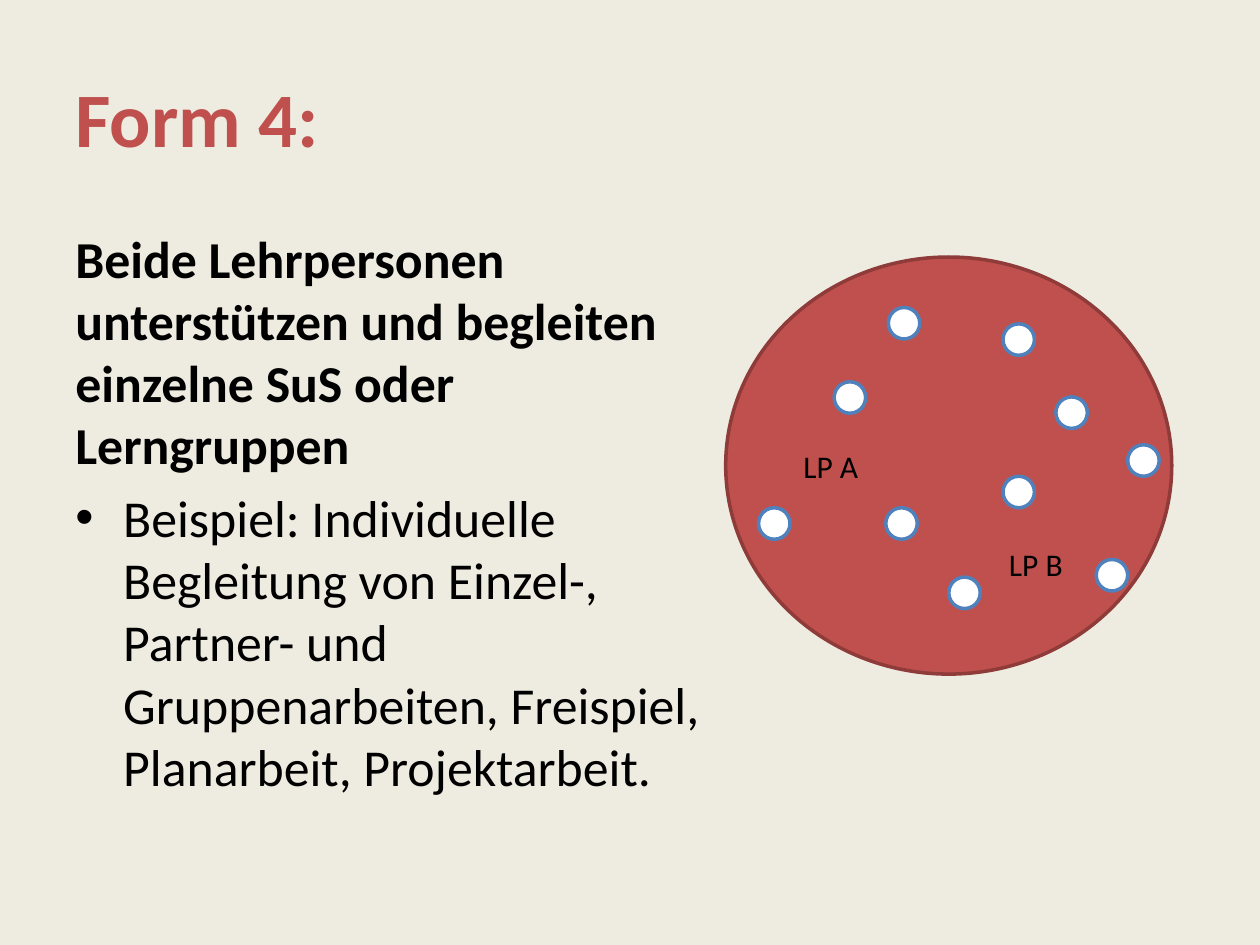
from lxml import etree
from pptx import Presentation
from pptx import util as u
from pptx.dml.color import RGBColor
from pptx.enum import shapes, text

COLS, ROWS = 40, 30  # square cells of a quarter inch
INK, RED, DARK_RED = "000000", "C0504D", "8E3B39"
WHITE, BLUE, CREAM = "FFFFFF", "4F81BD", "EEECE1"


def color(value):
    return RGBColor.from_string(value)


def write(tf, content, size=18, ink=INK, bold=False, before=0, bullet=None, first=True):
    """Add one formatted paragraph to a text frame."""
    p = tf.paragraphs[0] if first else tf.add_paragraph()
    p.alignment = text.PP_ALIGN.LEFT
    p.space_before = u.Pt(before)
    r = p.add_run()
    r.text = content
    r.font.name, r.font.size, r.font.bold = "Calibri", u.Pt(size), bold
    r.font.color.rgb = color(ink)
    if bullet:
        pPr = p._p.get_or_add_pPr()
        indent = u.Inches(0.38)
        pPr.set("marL", str(indent))
        pPr.set("indent", str(-indent))
        ns = pPr.nsmap["a"]
        etree.SubElement(pPr, f"{{{ns}}}buFont", typeface="Arial")
        etree.SubElement(pPr, f"{{{ns}}}buChar", char=bullet)


class Deck:
    """Holds the grid, the style and the current slide."""

    def __init__(self):
        self.prs = Presentation()
        self.prs.slide_width, self.prs.slide_height = u.Inches(10), u.Inches(7.5)
        self.s = self.prs.slides.add_slide(self.prs.slide_layouts[6])
        fill = self.s.background.fill
        fill.solid()
        fill.fore_color.rgb = color(CREAM)

    def box(self, col, row, width, height):
        cw, rh = self.prs.slide_width / COLS, self.prs.slide_height / ROWS
        return [round(v) for v in (col * cw, row * rh, width * cw, height * rh)]

    def text_box(self, *cells, anchor=text.MSO_ANCHOR.TOP, wrap=True):
        tf = self.s.shapes.add_textbox(*self.box(*cells)).text_frame
        tf.word_wrap, tf.vertical_anchor = wrap, anchor
        if not wrap:
            tf.auto_size = text.MSO_AUTO_SIZE.SHAPE_TO_FIT_TEXT
        return tf

    def circle(self, *cells, fill=WHITE, line=BLUE):
        sp = self.s.shapes.add_shape(
            shapes.MSO_SHAPE.FLOWCHART_CONNECTOR, *self.box(*cells))
        sp.shadow.inherit = False
        sp.fill.solid()
        sp.fill.fore_color.rgb = color(fill)
        sp.line.color.rgb = color(line)
        sp.line.width = u.Pt(2)
        sp.text_frame.vertical_anchor = text.MSO_ANCHOR.MIDDLE
        return sp


def main():
    deck = Deck()

    # Title
    title = deck.text_box(2, 1.2, 36, 5, anchor=text.MSO_ANCHOR.MIDDLE)
    write(title, "Form 4:", size=44, ink=RED, bold=True)

    # Description and example
    body = deck.text_box(2, 7, 21.48, 19.8)
    write(body, "Beide Lehrpersonen unterstützen und begleiten einzelne SuS oder "
          "Lerngruppen", size=29.6, bold=True, before=6)
    write(body, "Beispiel: Individuelle Begleitung von Einzel-, Partner- und "
          "Gruppenarbeiten, Freispiel, Planarbeit, Projektarbeit.",
          size=29.6, before=6, bullet="•", first=False)

    # Classroom with teacher A
    room = deck.circle(23.04, 8.16, 14.16, 13.24, fill=RED, line=DARK_RED)
    write(room.text_frame, "LP A")

    # Pupils, one cell each
    pupils = [(31.84, 10.28), (28.12, 16.12), (35.8, 14.12), (30.12, 18.32),
              (24.08, 16.12), (34.8, 17.76), (28.2, 9.76), (33.52, 12.6),
              (26.48, 12.12), (31.84, 15.12)]
    for col, row in pupils:
        deck.circle(col, row, 1, 1)

    # Teacher B
    write(deck.text_box(31.64, 17.12, 2.52, 1.6, wrap=False), "LP B")

    deck.prs.save("out.pptx")


if __name__ == "__main__":
    main()
